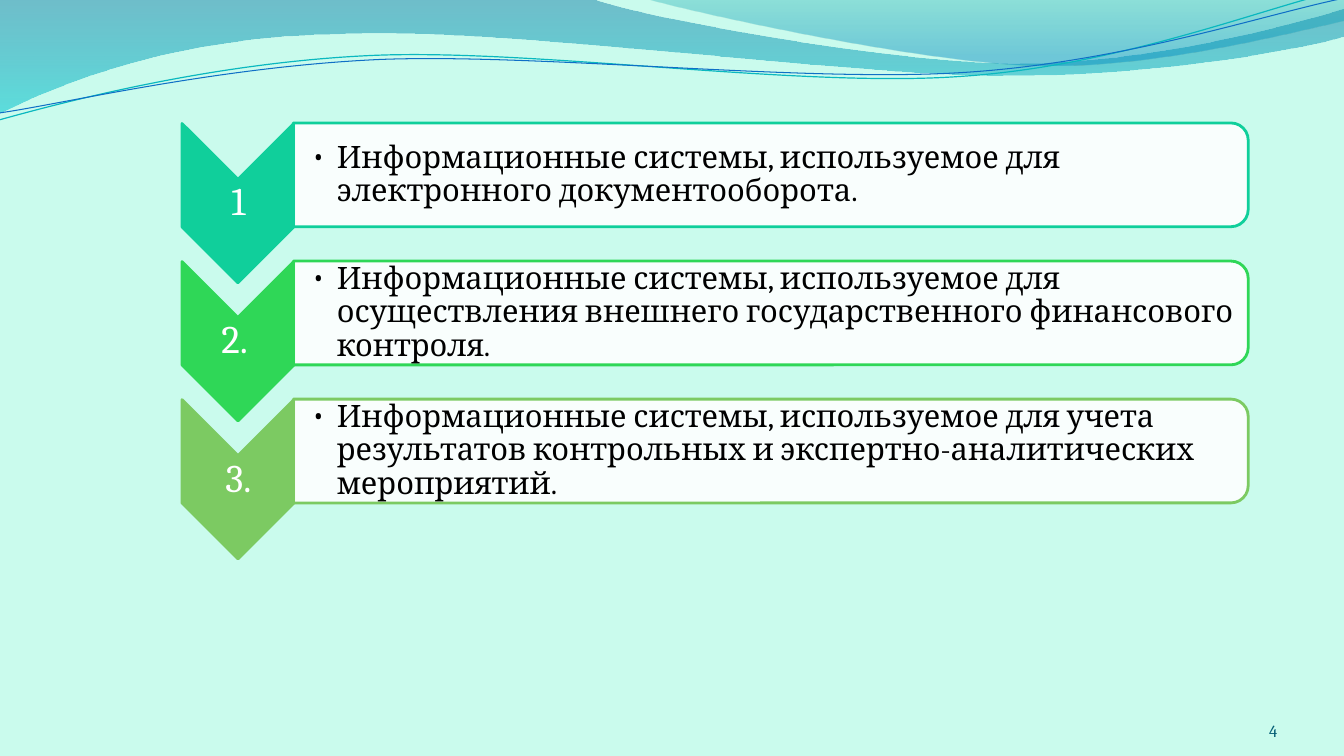
from lxml.etree import SubElement
from pptx import Presentation
from pptx.dml.color import RGBColor
from pptx.enum.shapes import MSO_SHAPE
from pptx.enum.text import MSO_ANCHOR, PP_ALIGN
from pptx.oxml.ns import qn
from pptx.util import Inches, Pt

MINT = RGBColor(0xCA, 0xFB, 0xED)
WHITE = RGBColor(0xFF, 0xFF, 0xFF)
BLACK = RGBColor(0x00, 0x00, 0x00)
DARK_TEAL = RGBColor(0x04, 0x5D, 0x75)
OCEAN = RGBColor(0x00, 0x74, 0xA1)
CYAN = RGBColor(0x00, 0xC6, 0xCF)
TEAL = RGBColor(0x00, 0xA1, 0xA9)
AZURE = RGBColor(0x00, 0x8B, 0xBF)
TURQUOISE = RGBColor(0x0A, 0xB8, 0xBF)
BLUE = RGBColor(0x0F, 0x6F, 0xC6)
FONT = "Cambria"

SYSTEMS = [
    ("1", "Информационные системы, используемое для электронного документооборота.",
     RGBColor(0x10, 0xCF, 0x9B)),
    ("2. ", "Информационные системы, используемое для осуществления внешнего "
     "государственного финансового контроля.", RGBColor(0x2F, 0xD7, 0x57)),
    ("3.", "Информационные системы, используемое для учета результатов контрольных "
     "и экспертно-аналитических мероприятий.", RGBColor(0x7C, 0xCA, 0x62)),
]
PAGE_NUMBER = "4"

# Outlines: two numbers make a straight segment, six a Bezier curve.
# Gradient stops: position, colour, opacity in percent.
WAVES = [
    ([(0, 0), (5.87, -0.01), (6.34, 0.17, 8.85, 0.63, 10.11, 0.63),
      (11.38, 0.63, 12.78, 0.26, 13.33, 0.09), (13.35, 0.36),
      (13.11, 0.44, 11.6, 0.76, 9.94, 0.75), (8.29, 0.75, 5.09, 0.28, 3.43, 0.34),
      (1.72, 0.36, 0.61, 0.83, -0.01, 1.13), (0, 0)],
     [(0, OCEAN, 45), (1, CYAN, 55)]),
    ([(6.39, -0.01), (6.79, 0.11, 9.09, 0.62, 10.25, 0.65),
      (11.41, 0.69, 12.82, 0.32, 13.33, 0.21), (13.33, 0), (6.39, -0.01)],
     [(0, TEAL, 30), (0.8, AZURE, 45)]),
]
STRANDS = [
    ([(-0.01, 1.19), (0.64, 1.01, 2.11, 0.62, 3.69, 0.55),
      (5.27, 0.48, 7.9, 0.87, 9.5, 0.76), (11.1, 0.66, 12.52, 0.08, 13.31, -0.1)],
     TURQUOISE, 0.85),
    ([(0, 1.12), (0.63, 1.03, 2.18, 0.66, 3.78, 0.59),
      (5.37, 0.53, 7.96, 0.82, 9.55, 0.72), (11.15, 0.62, 12.55, 0.14, 13.34, -0.02)],
     BLUE, 0.75),
]

ROW_PITCH = 1.37

deck = Presentation()
deck.slide_width, deck.slide_height = Inches(13.33), Inches(7.5)
slide = deck.slides.add_slide(deck.slide_layouts[6])
slide.background.fill.solid()
slide.background.fill.fore_color.rgb = MINT


def set_opacity(colour_holder, percent):
    colour = colour_holder.find(".//" + qn("a:srgbClr"))
    SubElement(colour, qn("a:alpha"), val=str(percent * 1000))


def draw_outline(outline, close):
    """Lay every point as a straight step, then join each curve's three steps."""
    points = [(Inches(x), Inches(y)) for segment in outline
              for x, y in zip(segment[::2], segment[1::2])]
    builder = slide.shapes.build_freeform(*points[0])
    builder.add_line_segments(points[1:], close=close)
    curve = builder.convert_to_shape()
    curve.shadow.inherit = False
    steps = iter(curve._element.spPr.findall(".//" + qn("a:lnTo")))
    for segment in outline[1:]:
        step = next(steps)
        if len(segment) == 6:
            bezier = step.makeelement(qn("a:cubicBezTo"))
            step.addprevious(bezier)
            for part in (step, next(steps), next(steps)):
                bezier.append(part[0])
                part.getparent().remove(part)
    return curve


def add_block(kind, left, top, width, height, fill, line):
    """Add a preset shape turned a quarter clockwise."""
    block = slide.shapes.add_shape(kind, Inches(left), Inches(top), Inches(width), Inches(height))
    block.rotation = 90
    block.shadow.inherit = False
    block.fill.solid()
    block.fill.fore_color.rgb = fill
    block.line.color.rgb = line
    block.line.width = Pt(2)
    return block


def add_label(text, box, size, colour, align, anchor=MSO_ANCHOR.MIDDLE, inset=0.02,
              left_inset=None, spacing=0.9):
    label = slide.shapes.add_textbox(*[Inches(value) for value in box])
    frame = label.text_frame
    frame.word_wrap = True
    frame.vertical_anchor = anchor
    frame.margin_left = Inches(inset if left_inset is None else left_inset)
    frame.margin_top = frame.margin_right = frame.margin_bottom = Inches(inset)
    paragraph = frame.paragraphs[0]
    paragraph.alignment = align
    paragraph.line_spacing = spacing
    run = paragraph.add_run()
    run.text = text
    run.font.name = FONT
    run.font.size = Pt(size)
    run.font.color.rgb = colour
    return paragraph


def add_bullet(paragraph):
    properties = paragraph._p.get_or_add_pPr()
    properties.set("marL", str(Inches(0.25)))
    properties.set("indent", str(-Inches(0.25)))
    SubElement(properties, qn("a:buFont"), typeface=FONT)
    SubElement(properties, qn("a:buChar"), char="•")


for outline, stops in WAVES:
    wave = draw_outline(outline, close=True)
    wave.line.fill.background()
    wave.fill.gradient()
    wave.fill.gradient_angle = 270
    for stop, (position, colour, opacity) in zip(wave.fill.gradient_stops, stops):
        stop.position = position
        stop.color.rgb = colour
        set_opacity(stop._gs, opacity)

for outline, colour, width in STRANDS:
    strand = draw_outline(outline, close=False)
    strand.fill.background()
    strand.line.color.rgb = colour
    strand.line.width = Pt(width)

for row, (number, description, colour) in enumerate(SYSTEMS):
    offset = row * ROW_PITCH
    add_block(MSO_SHAPE.CHEVRON, 1.57, 1.46 + offset, 1.58, 1.11, colour, colour)
    add_label(number, (1.81, 1.78 + offset, 1.11, 0.47), 28, WHITE, PP_ALIGN.CENTER)
    bar = add_block(MSO_SHAPE.ROUND_2_SAME_RECTANGLE, 7.13, -3 + offset, 1.03, 9.47,
                    WHITE, colour)
    set_opacity(bar._element.spPr.find(qn("a:solidFill")), 90)
    add_bullet(add_label(description, (2.92, 1.27 + offset, 9.42, 0.93), 22, BLACK,
                         PP_ALIGN.LEFT, left_inset=0.17))

add_label(PAGE_NUMBER, (11.56, 6.95, 1.11, 0.4), 12, DARK_TEAL, PP_ALIGN.RIGHT,
          anchor=MSO_ANCHOR.BOTTOM, inset=0, spacing=1.0)

deck.save("out.pptx")
